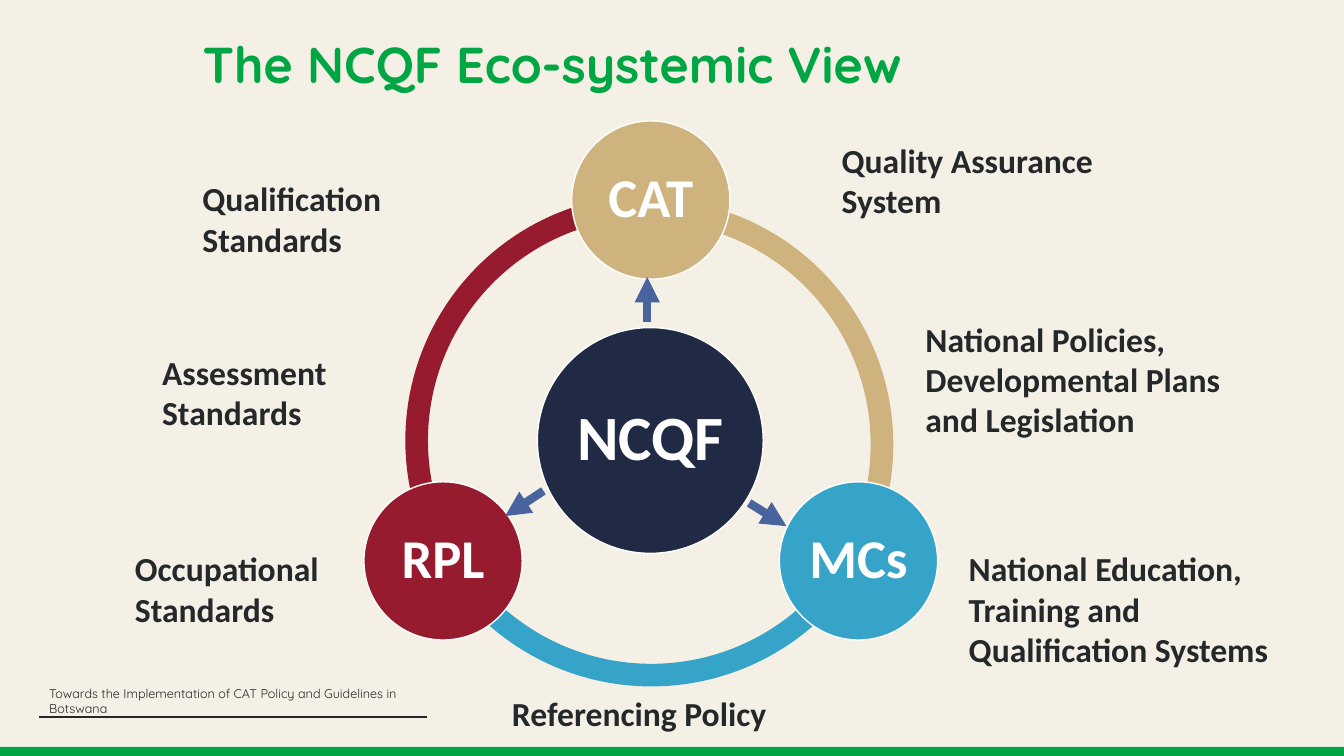
from dataclasses import dataclass

from lxml import etree
from pptx import Presentation
from pptx.dml.color import RGBColor
from pptx.enum.shapes import MSO_CONNECTOR, MSO_SHAPE
from pptx.enum.text import MSO_ANCHOR, MSO_AUTO_SIZE, PP_ALIGN
from pptx.oxml.ns import qn
from pptx.util import Inches, Pt

STRAIGHT = MSO_CONNECTOR.STRAIGHT
RECTANGLE, OVAL, BLOCK_ARC = MSO_SHAPE.RECTANGLE, MSO_SHAPE.OVAL, MSO_SHAPE.BLOCK_ARC
TOP, MIDDLE = MSO_ANCHOR.TOP, MSO_ANCHOR.MIDDLE
LEFT, CENTER = PP_ALIGN.LEFT, PP_ALIGN.CENTER
GROW, FIXED = MSO_AUTO_SIZE.SHAPE_TO_FIT_TEXT, MSO_AUTO_SIZE.NONE

COLORS = {
    "cream": "F5F0E5", "green": "00A643", "ink": "24282A", "white": "FFFFFF",
    "navy": "202A44", "gold": "CEB37E", "blue": "36A4C9", "red": "971B2F",
    "arrow": "48639D",
}
RING_SIZE = 4.88
RING_THICKNESS = 0.046
ANGLE_UNIT = 0.6


@dataclass
class Arc:
    left: float
    top: float
    start: float
    end: float
    color: str


@dataclass
class Node:
    text: str
    left: float
    top: float
    diameter: float
    color: str
    size: float


@dataclass
class Label:
    text: str
    left: float
    top: float
    width: float
    height: float


@dataclass
class Arrow:
    x1: float
    y1: float
    x2: float
    y2: float


ARCS = [
    Arc(4.02, 1.93, 150, 270, "red"),
    Arc(4.02, 1.93, 30, 150, "blue"),
    Arc(3.98, 1.97, 270, 30, "gold"),
]
NODES = [
    Node("NCQF", 5.33, 3.25, 2.24, "navy", 45),
    Node("CAT", 5.67, 1.2, 1.57, "gold", 39),
    Node("MCs", 7.73, 4.78, 1.57, "blue", 39),
    Node("RPL", 3.61, 4.78, 1.57, "red", 39),
]
ARROWS = [
    Arrow(6.42, 3.19, 6.42, 2.75),
    Arrow(5.39, 4.87, 5.01, 5.12),
    Arrow(7.43, 4.99, 7.8, 5.22),
]
LABELS = [
    Label("Qualification Standards", 1.91, 1.72, 3.03, 0.91),
    Label("Quality Assurance System", 8.25, 1.34, 2.7, 0.91),
    Label("Assessment Standards", 1.51, 3.44, 3.03, 0.91),
    Label("Referencing Policy", 4.98, 6.83, 3.03, 0.5),
    Label("National Policies, Developmental Plans and Legislation", 9.08, 3.11, 3.18, 1.31),
    Label("Occupational Standards", 1.24, 5.39, 3.03, 0.91),
    Label("National Education, Training and Qualification Systems", 9.51, 5.39, 3.37, 1.31),
]


def rgb(name: str) -> RGBColor:
    return RGBColor.from_string(COLORS[name])


def write(shape, text: str, *, size: float, font: str = "Calibri", color: str = "ink",
          bold: bool = True, align=LEFT, anchor=TOP, spacing: float = 1.0,
          wrap: bool = True, fit=FIXED) -> None:
    frame = shape.text_frame
    frame.word_wrap = wrap
    frame.auto_size = fit
    frame.vertical_anchor = anchor
    paragraph = frame.paragraphs[0]
    paragraph.alignment = align
    paragraph.line_spacing = spacing
    run = paragraph.add_run()
    run.text = text
    run.font.name = font
    run.font.size = Pt(size)
    run.font.bold = bold
    run.font.color.rgb = rgb(color)


def add_filled(slide, kind, left: float, top: float, width: float, height: float, color: str):
    shape = slide.shapes.add_shape(kind, Inches(left), Inches(top), Inches(width), Inches(height))
    shape.shadow.inherit = False
    shape.fill.solid()
    shape.fill.fore_color.rgb = rgb(color)
    shape.line.fill.background()
    return shape


def add_line(slide, x1: float, y1: float, x2: float, y2: float, color: str, width: float):
    line = slide.shapes.add_connector(STRAIGHT, Inches(x1), Inches(y1), Inches(x2), Inches(y2))
    line.line.color.rgb = rgb(color)
    line.line.width = Pt(width)
    etree.SubElement(line._element.spPr, qn("a:effectLst"))
    return line


def add_arc(slide, arc: Arc) -> None:
    band = add_filled(slide, BLOCK_ARC, arc.left, arc.top, RING_SIZE, RING_SIZE, arc.color)
    band.adjustments[0] = arc.start * ANGLE_UNIT
    band.adjustments[1] = arc.end * ANGLE_UNIT
    band.adjustments[2] = RING_THICKNESS


def add_node(slide, node: Node) -> None:
    circle = add_filled(slide, OVAL, node.left, node.top, node.diameter, node.diameter, node.color)
    circle.line.color.rgb = rgb("white")
    circle.line.width = Pt(1)
    frame = circle.text_frame
    frame.margin_left = frame.margin_right = frame.margin_top = frame.margin_bottom = Inches(0.05)
    write(circle, node.text, size=node.size, color="white", align=CENTER, anchor=MIDDLE,
          spacing=0.9, wrap=False)


def add_arrow(slide, arrow: Arrow) -> None:
    line = add_line(slide, arrow.x1, arrow.y1, arrow.x2, arrow.y2, "arrow", 6)
    etree.SubElement(line.line._get_or_add_ln(), qn("a:tailEnd"), type="triangle")


def add_label(slide, label: Label, **text_format) -> None:
    box = slide.shapes.add_textbox(Inches(label.left), Inches(label.top),
                                   Inches(label.width), Inches(label.height))
    write(box, label.text, **text_format)


def main() -> None:
    deck = Presentation()
    deck.slide_width, deck.slide_height = Inches(13.33), Inches(7.5)
    slide = deck.slides.add_slide(deck.slide_layouts[5])
    slide.background.fill.solid()
    slide.background.fill.fore_color.rgb = rgb("cream")

    add_filled(slide, RECTANGLE, -0.03, 7.41, 13.4, 0.13, "green")
    add_line(slide, 0.39, 7.11, 4.24, 7.11, "ink", 1.5)

    title = slide.shapes.title
    title.left, title.top = Inches(1.91), Inches(0.35)
    title.width, title.height = Inches(11.03), Inches(0.65)
    write(title, "The NCQF Eco-systemic View", size=36, font="Quicksand", color="green",
          spacing=0.9, fit=GROW)

    for arc in ARCS:
        add_arc(slide, arc)
    for node in NODES:
        add_node(slide, node)
    for arrow in ARROWS:
        add_arrow(slide, arrow)

    footer = Label("Towards the Implementation of CAT Policy and Guidelines in Botswana",
                   0.39, 6.86, 4.06, 0.19)
    add_label(slide, footer, size=9, font="Quicksand", bold=False, anchor=MIDDLE)
    for label in LABELS:
        add_label(slide, label, size=24, fit=GROW)

    deck.save("out.pptx")


if __name__ == "__main__":
    main()
